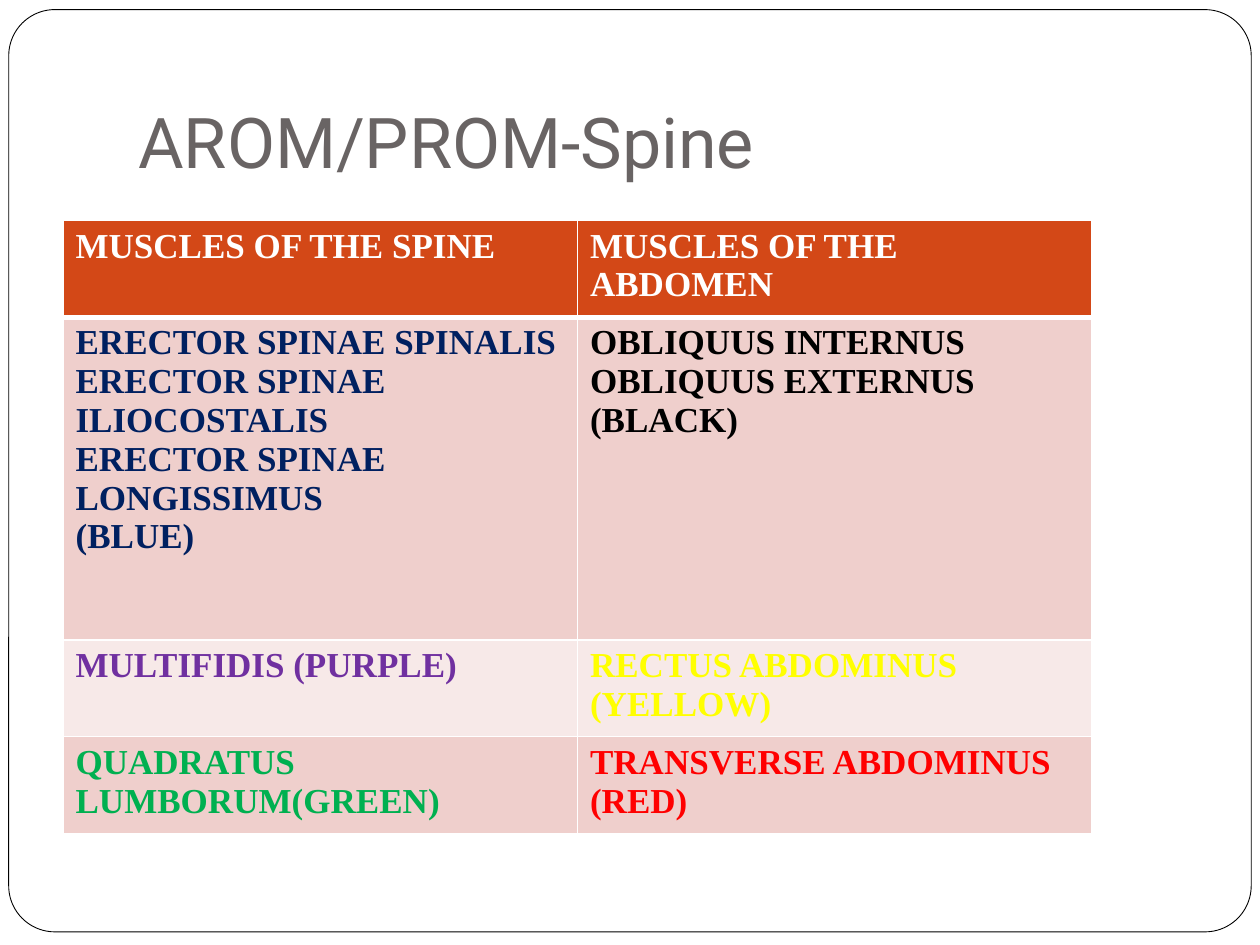
"""Build the spine and abdomen muscle slide."""
from dataclasses import dataclass

from lxml.etree import SubElement
from pptx import Presentation
from pptx.dml.color import RGBColor
from pptx.enum.shapes import MSO_SHAPE
from pptx.enum.text import MSO_ANCHOR
from pptx.oxml.ns import qn
from pptx.util import Pt


@dataclass(frozen=True)
class Theme:
    title_font: str = "Roboto"
    table_font: str = "Times New Roman"
    title_size: float = 40
    table_size: float = 20
    title: str = "696464"
    white: str = "FFFFFF"
    frame: str = "000000"
    header: str = "D34817"
    bands: tuple = ("EFCFCC", "F7E9E8")
    navy: str = "002060"
    black: str = "000000"
    purple: str = "7030A0"
    yellow: str = "FFFF00"
    green: str = "00B050"
    red: str = "FF0000"


class SlideBuilder:
    def __init__(self, slide, theme):
        self.slide = slide
        self.theme = theme

    def style(self, text_frame, font_name, size, color, bold=False):
        for paragraph in text_frame.paragraphs:
            font = paragraph.font
            font.name, font.size, font.bold = font_name, Pt(size), bold
            font.color.rgb = RGBColor.from_string(color)

    def frame(self, left, top, width, height, corner):
        shape = self.slide.shapes.add_shape(
            MSO_SHAPE.ROUNDED_RECTANGLE, Pt(left), Pt(top), Pt(width), Pt(height))
        shape.adjustments[0] = corner
        shape.shadow.inherit = False
        shape.fill.solid()
        shape.fill.fore_color.rgb = RGBColor.from_string(self.theme.white)
        shape.line.color.rgb = RGBColor.from_string(self.theme.frame)
        shape.line.width = Pt(0.5)

    def title(self, text, left, top, width, height):
        shape = self.slide.shapes.add_textbox(Pt(left), Pt(top), Pt(width), Pt(height))
        text_frame = shape.text_frame
        text_frame.word_wrap = True
        text_frame.vertical_anchor = MSO_ANCHOR.BOTTOM
        text_frame.margin_bottom = Pt(7.2)
        text_frame.text = text
        self.style(text_frame, self.theme.title_font, self.theme.title_size, self.theme.title)

    def borders(self, cell, bottom):
        properties = cell._tc.get_or_add_tcPr()
        for side, width in (("L", 1), ("R", 1), ("T", 1), ("B", bottom)):
            line = SubElement(properties, qn(f"a:ln{side}"), w=str(Pt(width)))
            fill = SubElement(line, qn("a:solidFill"))
            SubElement(fill, qn("a:srgbClr"), val=self.theme.white)

    def table(self, rows, left, top, width, heights):
        theme = self.theme
        table = self.slide.shapes.add_table(
            len(rows), len(rows[0]), Pt(left), Pt(top), Pt(width), Pt(sum(heights))).table
        for row_index, (row, height) in enumerate(zip(rows, heights)):
            table.rows[row_index].height = Pt(height)
            is_header = row_index == 0
            fill = theme.header if is_header else theme.bands[(row_index - 1) % 2]
            for column_index, (text, color) in enumerate(row):
                cell = table.cell(row_index, column_index)
                self.borders(cell, 3 if is_header else 1)
                cell.fill.solid()
                cell.fill.fore_color.rgb = RGBColor.from_string(fill)
                cell.text = text
                self.style(cell.text_frame, theme.table_font, theme.table_size, color, True)


def main():
    theme = Theme()
    presentation = Presentation()
    presentation.slide_width, presentation.slide_height = Pt(720), Pt(540)
    slide = presentation.slides.add_slide(presentation.slide_layouts[6])
    builder = SlideBuilder(slide, theme)
    builder.frame(5, 5.5, 710, 527, 0.05)
    builder.title("AROM/PROM-Spine", 72, 21.6, 612, 90)
    spine_muscles = "\n".join((
        "ERECTOR SPINAE SPINALIS", "ERECTOR SPINAE ILIOCOSTALIS",
        "ERECTOR SPINAE LONGISSIMUS", "(BLUE)"))
    rows = [
        [("MUSCLES OF THE SPINE", theme.white), ("MUSCLES OF THE ABDOMEN", theme.white)],
        [(spine_muscles, theme.navy),
         ("OBLIQUUS INTERNUS\nOBLIQUUS EXTERNUS\n(BLACK)", theme.black)],
        [("MULTIFIDIS (PURPLE)", theme.purple), ("RECTUS ABDOMINUS (YELLOW)", theme.yellow)],
        [("QUADRATUS LUMBORUM(GREEN)", theme.green),
         ("TRANSVERSE ABDOMINUS (RED)", theme.red)],
    ]
    builder.table(rows, 36, 126, 588, (51.5, 184.5, 51.5, 51.5))
    presentation.save("out.pptx")


if __name__ == "__main__":
    main()
